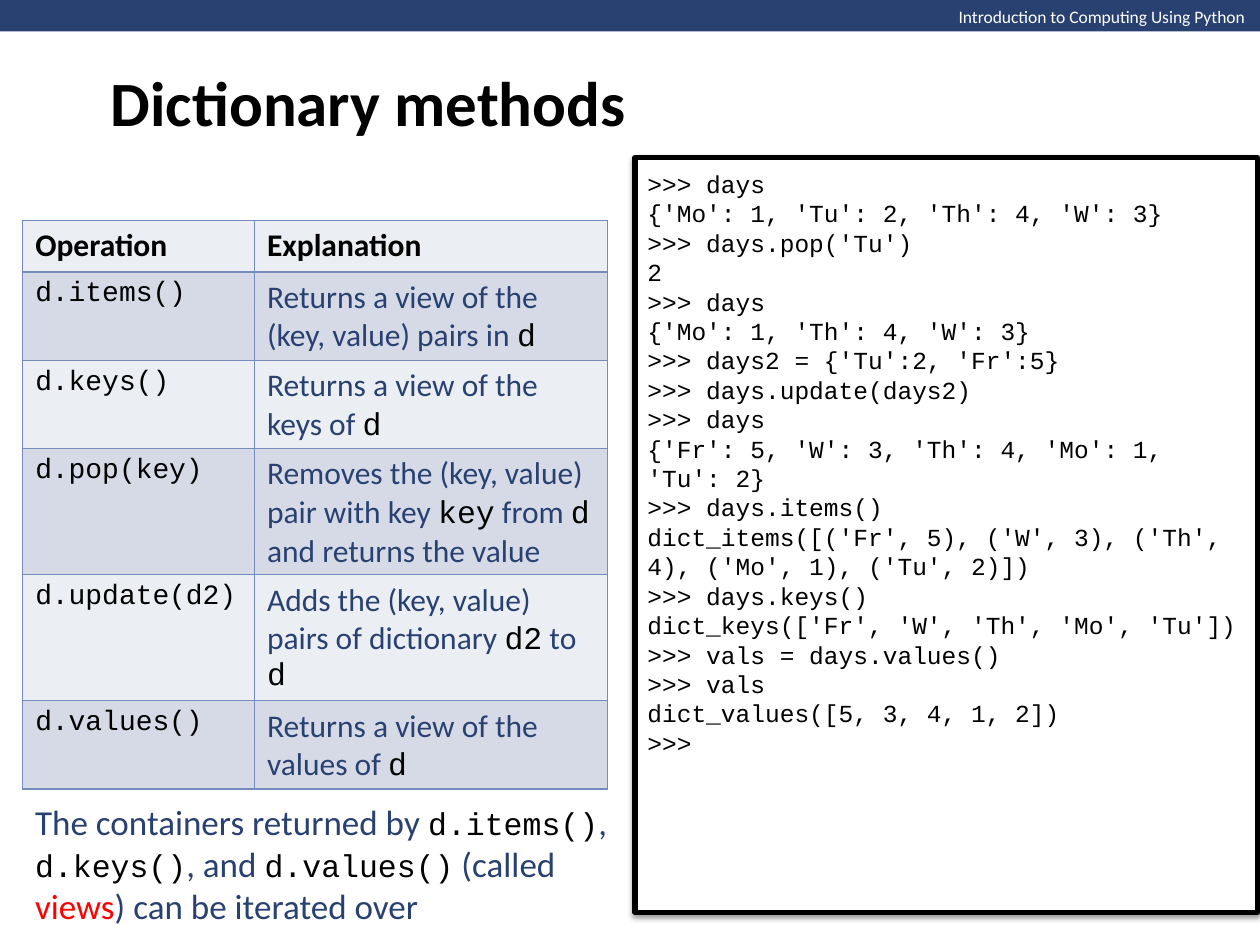
from typing import NamedTuple

from lxml import etree
from pptx import Presentation
from pptx.dml.color import RGBColor
from pptx.enum.shapes import MSO_SHAPE
from pptx.enum.text import MSO_ANCHOR, PP_ALIGN
from pptx.oxml.ns import qn
from pptx.util import Emu, Inches, Pt

RECT = MSO_SHAPE.RECTANGLE
TOP, MIDDLE = MSO_ANCHOR.TOP, MSO_ANCHOR.MIDDLE
LEFT = PP_ALIGN.LEFT

COLS, ROWS = 100, 75  # slide grid
WIDTH, HEIGHT = Inches(10), Inches(7.5)
SANS, MONO = "Calibri", "Courier New"
NAVY, BLACK, WHITE, RED = "294171", "000000", "FFFFFF", "FF0000"
EDGE, PALE, BAND = "748CBC", "EBEEF3", "D6DAE7"


class Box(NamedTuple):
    """Place and size in grid columns and rows."""
    x: float
    y: float
    w: float
    h: float

    def emu(self) -> list[Emu]:
        return [across(self.x), down(self.y), across(self.w), down(self.h)]


class Method(NamedTuple):
    call: str
    about: str
    rows: float


METHODS = [
    Method("d.items()", "Returns a view of the (key, value) pairs in `d`", 7),
    Method("d.keys()", "Returns a view of the keys of `d`", 7),
    Method("d.pop(key)", "Removes the (key, value) pair with key `key` from `d`"
           " and returns the value", 10),
    Method("d.update(d2)",
           "Adds the (key, value) pairs of dictionary `d2` to `d`", 10),
    Method("d.values()", "Returns a view of the values of `d`", 7),
]

SESSION = """>>> days
{'Mo': 1, 'Tu': 2, 'Th': 4, 'W': 3}
>>> days.pop('Tu')
2
>>> days
{'Mo': 1, 'Th': 4, 'W': 3}
>>> days2 = {'Tu':2, 'Fr':5}
>>> days.update(days2)
>>> days
{'Fr': 5, 'W': 3, 'Th': 4, 'Mo': 1, 'Tu': 2}
>>> days.items()
dict_items([('Fr', 5), ('W', 3), ('Th', 4), ('Mo', 1), ('Tu', 2)])
>>> days.keys()
dict_keys(['Fr', 'W', 'Th', 'Mo', 'Tu'])
>>> vals = days.values()
>>> vals
dict_values([5, 3, 4, 1, 2])
>>>"""


def across(cols: float) -> Emu:
    return Emu(round(WIDTH * cols / COLS))


def down(rows: float) -> Emu:
    return Emu(round(HEIGHT * rows / ROWS))


def rgb(code: str) -> RGBColor:
    return RGBColor.from_string(code)


def paint(item, code: str) -> None:
    item.fill.solid()
    item.fill.fore_color.rgb = rgb(code)


def write(frame, text: str, *, size: float, font: str = SANS,
          color: str = BLACK, bold: bool = False, code: float = 18,
          anchor=TOP, wrap: bool = True) -> None:
    """Fill a frame; `x` marks code and *x* marks a red term."""
    frame.word_wrap = wrap
    frame.vertical_anchor = anchor
    for n, line in enumerate(text.split("\n")):
        para = frame.paragraphs[0] if n == 0 else frame.add_paragraph()
        para.alignment = LEFT
        for i, part in enumerate(line.split("`")):
            for j, piece in enumerate(part.split("*")):
                if not piece:
                    continue
                run = para.add_run()
                run.text = piece
                look = run.font
                look.name = MONO if i % 2 else font
                look.size = Pt(code if i % 2 else size)
                look.bold = bold
                tint = RED if j % 2 else BLACK if i % 2 else color
                look.color.rgb = rgb(tint)


def add_text(slide, box: Box, text: str, **look) -> None:
    write(slide.shapes.add_textbox(*box.emu()).text_frame, text, **look)


def add_rect(slide, box: Box, fill: str):
    shape = slide.shapes.add_shape(RECT, *box.emu())
    shape.shadow.inherit = False
    paint(shape, fill)
    shape.line.fill.background()
    return shape


def add_color(node, code: str):
    return etree.SubElement(node, qn("a:srgbClr"), val=code)


def cast(shape) -> None:
    """Give a shape a soft shadow below it."""
    glow = shape._element.spPr.find(qn("a:effectLst"))
    shade = etree.SubElement(
        glow, qn("a:outerShdw"), blurRad=str(Pt(3.1)), dist=str(Pt(1.6)),
        dir=str(90 * 60000), rotWithShape="0")
    etree.SubElement(add_color(shade, BLACK), qn("a:alpha"), val="38000")


def add_console(slide, box: Box) -> None:
    shape = add_rect(slide, box, WHITE)
    shape.line.color.rgb = rgb(BLACK)
    shape.line.width = Pt(3)
    cast(shape)
    shape.text_frame.margin_top = down(0.9)
    write(shape.text_frame, SESSION, size=14, font=MONO)


def fill_cell(cell, fill: str, text: str, **look) -> None:
    props = cell._tc.get_or_add_tcPr()
    for side in "LRTB":
        line = etree.SubElement(props, qn(f"a:ln{side}"), w=str(Pt(1)))
        add_color(etree.SubElement(line, qn("a:solidFill")), EDGE)
    paint(cell, fill)
    write(cell.text_frame, text, **look)


def add_methods(slide, box: Box, head: float, split: float) -> None:
    frame = slide.shapes.add_table(len(METHODS) + 1, 2, *box.emu())
    table = frame.table
    table.first_row = table.horz_banding = False
    table.columns[0].width = across(split)
    table.columns[1].width = across(box.w - split)
    table.rows[0].height = down(head)
    for col, name in enumerate(("Operation", "Explanation")):
        fill_cell(table.cell(0, col), PALE, name, size=18, bold=True)
    for row, item in enumerate(METHODS, 1):
        table.rows[row].height = down(item.rows)
        fill = BAND if row % 2 else PALE
        fill_cell(table.cell(row, 0), fill, item.call, size=16, font=MONO)
        fill_cell(table.cell(row, 1), fill, item.about, size=18, color=NAVY)


def add_title(slide, box: Box, text: str) -> None:
    title = slide.shapes.title
    title.left, title.top, title.width, title.height = box.emu()
    write(title.text_frame, text, size=36, bold=True, anchor=MIDDLE)


def main() -> None:
    deck = Presentation()
    deck.slide_width, deck.slide_height = WIDTH, HEIGHT
    slide = deck.slides.add_slide(deck.slide_layouts[5])
    add_rect(slide, Box(0, 0, COLS, 2.5), NAVY)
    add_text(slide, Box(75.1, 0, 25, 2.7),
             "Introduction to Computing Using Python",
             size=10, color=WHITE, wrap=False)
    add_title(slide, Box(7.8, 0, 85, 16.1), "Dictionary methods")
    add_console(slide, Box(50.4, 12.5, 49.4, 59.9))
    add_methods(slide, Box(1.8, 17.5, 46.4, 45.1), head=4.1, split=18.4)
    add_text(slide, Box(1.8, 63, 48.5, 11.1),
             "The containers returned by `d.items()`, `d.keys()`, and "
             "`d.values()` (called *views*) can be iterated over",
             size=20, color=NAVY, anchor=MIDDLE)
    deck.save("out.pptx")


if __name__ == "__main__":
    main()
